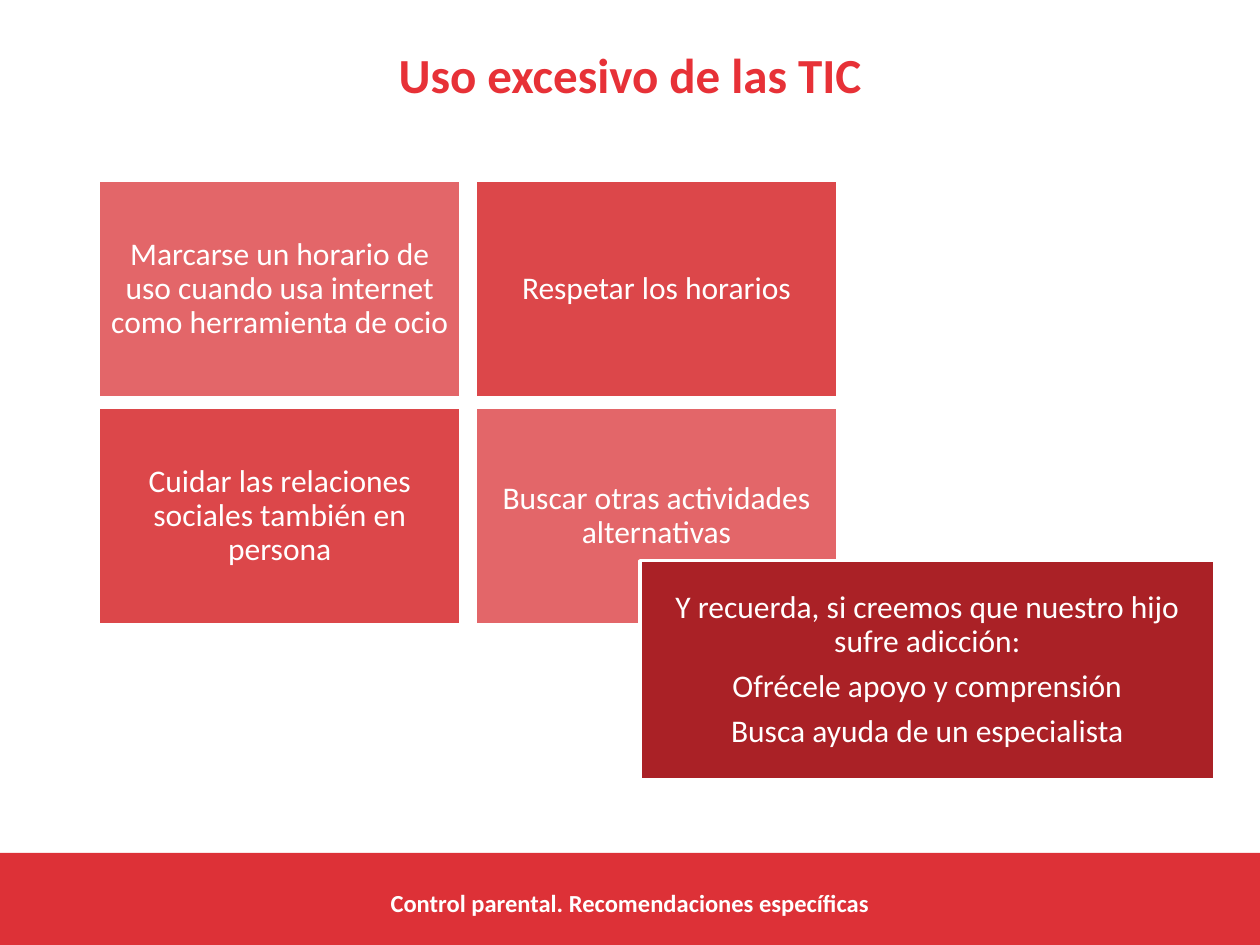
import pptx
import pptx.dml.color
import pptx.enum.shapes
import pptx.enum.text
import pptx.util
from pptx.util import Inches

TITLE = "Uso excesivo de las TIC"
FOOTER = "Control parental. Recomendaciones específicas"
ADVICE = [
    ["Marcarse un horario de uso cuando usa internet como herramienta de ocio",
     "Respetar los horarios"],
    ["Cuidar las relaciones sociales también en persona",
     "Buscar otras actividades alternativas"],
]
REMINDER = [
    "Y recuerda, si creemos que nuestro hijo sufre adicción:",
    "Ofrécele apoyo y comprensión",
    "Busca ayuda de un especialista",
]

THEME = {
    "font": "Calibri",
    "title": "E73137", "white": "FFFFFF", "bar": "DD3137",
    "advice": ("E36669", "DC474A"), "reminder": "AA2126",
    "title_size": 28, "body_size": 18, "footer_size": 14,
}
GRID_LEFT, GRID_TOP = 0.78, 1.43
CELL_WIDTH, CELL_HEIGHT = 2.88, 1.73
COLUMN_STEP, ROW_STEP = 2.99, 1.8
INSET = 0.07


def rgb(name):
    return pptx.dml.color.RGBColor.from_string(name)


def place(shape, box):
    shape.left, shape.top, shape.width, shape.height = map(Inches, box)


def write(frame, texts, size, color, bold=False):
    frame.word_wrap = True
    for index, text in enumerate(texts):
        paragraph = frame.paragraphs[0] if index == 0 else frame.add_paragraph()
        paragraph.text = text
        paragraph.alignment = pptx.enum.text.PP_ALIGN.CENTER
        font = paragraph.font
        font.name, font.size, font.bold = THEME["font"], pptx.util.Pt(size), bold
        font.color.rgb = rgb(color)


def add_block(slide, box, fill):
    block = slide.shapes.add_shape(
        pptx.enum.shapes.MSO_SHAPE.RECTANGLE, *map(Inches, box))
    block.shadow.inherit = False
    block.fill.solid()
    block.fill.fore_color.rgb = rgb(fill)
    block.line.fill.background()
    return block


def add_card(slide, box, fill, texts):
    card = add_block(slide, box, fill)
    card.line.color.rgb = rgb(THEME["white"])
    card.line.width = pptx.util.Pt(2)
    frame = card.text_frame
    frame.margin_left = frame.margin_right = Inches(INSET)
    frame.margin_top = frame.margin_bottom = Inches(INSET)
    frame.vertical_anchor = pptx.enum.text.MSO_ANCHOR.MIDDLE
    write(frame, texts, THEME["body_size"], THEME["white"])
    for paragraph in frame.paragraphs:
        paragraph.line_spacing = 0.9
        paragraph.space_after = pptx.util.Pt(0.35 * THEME["body_size"])


def main():
    deck = pptx.Presentation()
    deck.slide_width, deck.slide_height = Inches(10), Inches(7.5)
    slide = deck.slides.add_slide(deck.slide_layouts.get_by_name("Title Only"))

    add_block(slide, (0, 6.77, 10, 0.76), THEME["bar"])

    title = slide.shapes.title
    place(title, (0.5, 0.3, 9, 0.72))
    title.text_frame.vertical_anchor = pptx.enum.text.MSO_ANCHOR.TOP
    write(title.text_frame, [TITLE], THEME["title_size"], THEME["title"], bold=True)

    footer = slide.shapes.add_textbox(*map(Inches, (0.5, 7, 9, 0.31)))
    write(footer.text_frame, [FOOTER], THEME["footer_size"], THEME["white"], bold=True)

    for row, texts in enumerate(ADVICE):
        for column, text in enumerate(texts):
            box = (GRID_LEFT + column * COLUMN_STEP, GRID_TOP + row * ROW_STEP,
                   CELL_WIDTH, CELL_HEIGHT)
            add_card(slide, box, THEME["advice"][(row + column) % 2], [text])

    add_card(slide, (5.08, 4.45, 4.56, 1.74), THEME["reminder"], REMINDER)
    deck.save("out.pptx")


if __name__ == "__main__":
    main()
